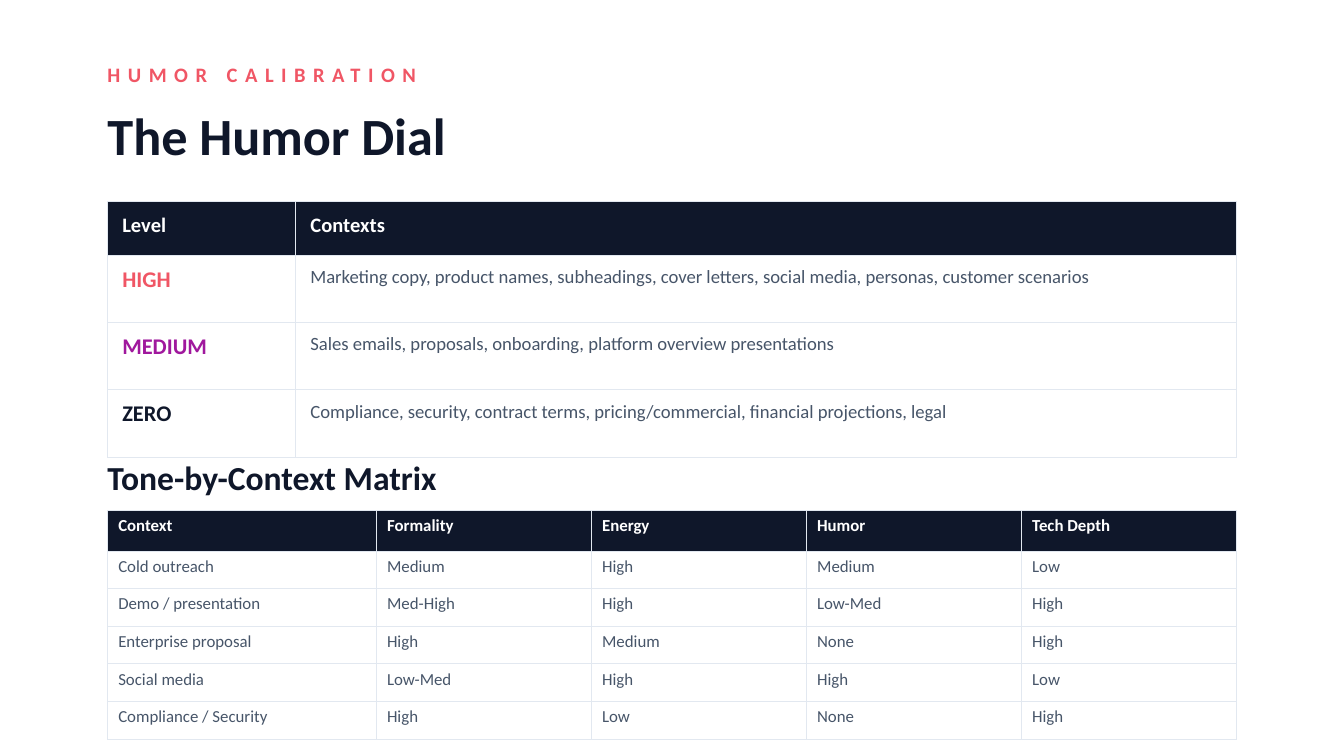
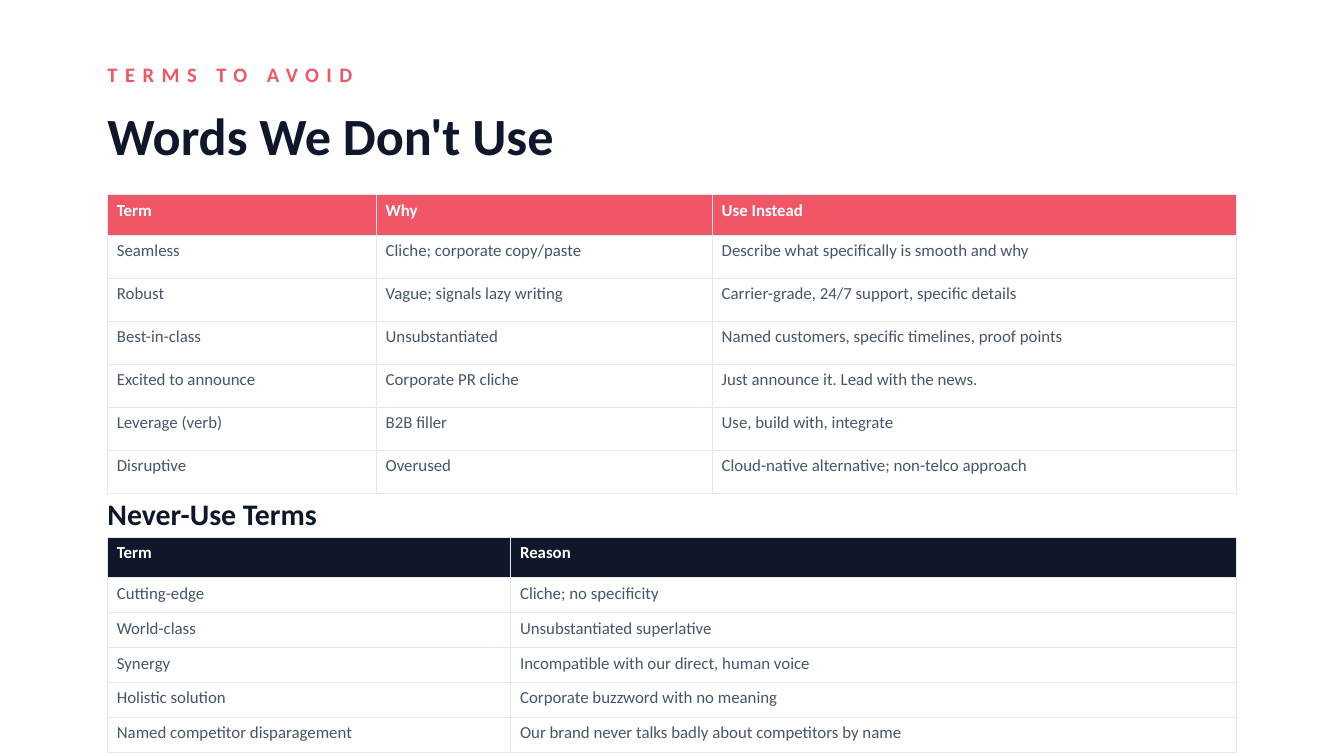
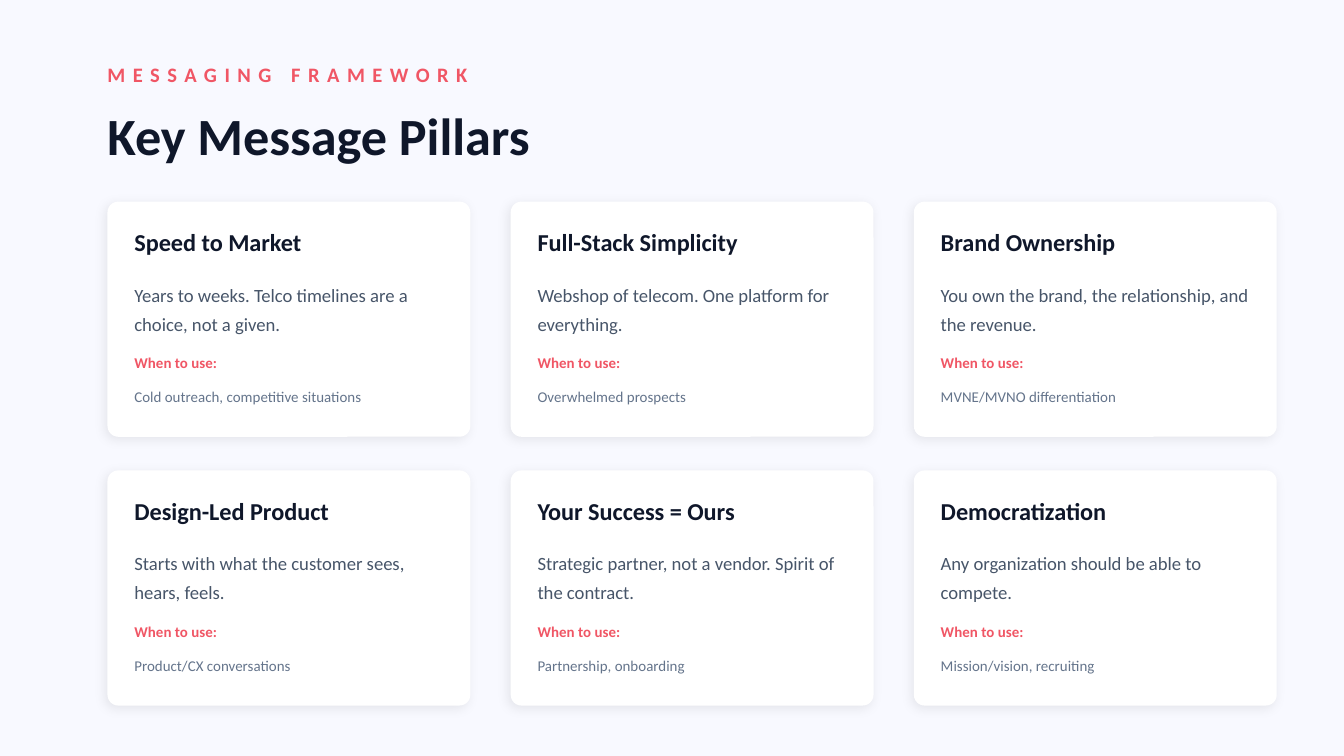
"""Build three brand voice slides: humor levels, terms to avoid and message pillars."""
from dataclasses import dataclass
from typing import Any

from lxml import etree
from pptx import Presentation
from pptx import util as u
from pptx.dml.color import RGBColor
from pptx.enum import shapes, text
from pptx.oxml.ns import qn

PX = 4572
FONT = "Calibri"
COLORS = {
    "white": "FFFFFF",
    "mist": "F8F9FF",
    "navy": "0F172A",
    "coral": "F05665",
    "purple": "A0189D",
    "slate": "475569",
    "gray": "64748B",
    "rule": "E2E8F0",
    "black": "000000",
}
MARGIN = 160
HEADING_WIDTH = 1600


@dataclass(frozen=True)
class Grid:
    """A ruled table with a filled header row."""

    top: int
    columns: tuple[int, ...]
    header_height: int
    row_height: int
    rows: tuple[tuple[str, ...], ...]
    pad_x: int = 14
    pad_y: int = 8
    header_color: str = "navy"
    header_size: int = 9
    body_size: int = 9
    level_colors: tuple[str, ...] = ()


@dataclass(frozen=True)
class Pillar:
    """A message pillar and the situations it suits."""

    title: str
    message: str
    usage: str


HUMOR_LEVELS = Grid(
    300, (280, 1400), 80, 100,
    (
        ("Level", "Contexts"),
        ("HIGH", "Marketing copy, product names, subheadings, cover letters, "
                 "social media, personas, customer scenarios"),
        ("MEDIUM", "Sales emails, proposals, onboarding, platform overview presentations"),
        ("ZERO", "Compliance, security, contract terms, pricing/commercial, "
                 "financial projections, legal"),
    ),
    pad_x=22, pad_y=16, header_size=11, body_size=10,
    level_colors=("coral", "purple", "navy"),
)
TONE_MATRIX = Grid(
    760, (400, 320, 320, 320, 320), 60, 56,
    (
        ("Context", "Formality", "Energy", "Humor", "Tech Depth"),
        ("Cold outreach", "Medium", "High", "Medium", "Low"),
        ("Demo / presentation", "Med-High", "High", "Low-Med", "High"),
        ("Enterprise proposal", "High", "Medium", "None", "High"),
        ("Social media", "Low-Med", "High", "High", "Low"),
        ("Compliance / Security", "High", "Low", "None", "High"),
    ),
    pad_x=16,
)
AVOIDED_TERMS = Grid(
    290, (400, 500, 780), 60, 64,
    (
        ("Term", "Why", "Use Instead"),
        ("Seamless", "Cliche; corporate copy/paste",
         "Describe what specifically is smooth and why"),
        ("Robust", "Vague; signals lazy writing",
         "Carrier-grade, 24/7 support, specific details"),
        ("Best-in-class", "Unsubstantiated",
         "Named customers, specific timelines, proof points"),
        ("Excited to announce", "Corporate PR cliche", "Just announce it. Lead with the news."),
        ("Leverage (verb)", "B2B filler", "Use, build with, integrate"),
        ("Disruptive", "Overused", "Cloud-native alternative; non-telco approach"),
    ),
    header_color="coral",
)
NEVER_TERMS = Grid(
    800, (600, 1080), 60, 52,
    (
        ("Term", "Reason"),
        ("Cutting-edge", "Cliche; no specificity"),
        ("World-class", "Unsubstantiated superlative"),
        ("Synergy", "Incompatible with our direct, human voice"),
        ("Holistic solution", "Corporate buzzword with no meaning"),
        ("Named competitor disparagement", "Our brand never talks badly about competitors by name"),
    ),
)
PILLARS = (
    Pillar("Speed to Market", "Years to weeks. Telco timelines are a choice, not a given.",
           "Cold outreach, competitive situations"),
    Pillar("Full-Stack Simplicity", "Webshop of telecom. One platform for everything.",
           "Overwhelmed prospects"),
    Pillar("Brand Ownership", "You own the brand, the relationship, and the revenue.",
           "MVNE/MVNO differentiation"),
    Pillar("Design-Led Product", "Starts with what the customer sees, hears, feels.",
           "Product/CX conversations"),
    Pillar("Your Success = Ours", "Strategic partner, not a vendor. Spirit of the contract.",
           "Partnership, onboarding"),
    Pillar("Democratization", "Any organization should be able to compete.",
           "Mission/vision, recruiting"),
)


def px(length: int) -> u.Emu:
    """Turn pixels into EMU."""
    return u.Emu(length * PX)


def rgb(color: str) -> RGBColor:
    """Look up a named colour."""
    return RGBColor.from_string(COLORS[color])


def write(frame: Any, content: str, *, size: int, color: str, bold: bool = False,
          tracking: int = 0, line_spacing: float | None = None) -> None:
    """Put one formatted run of text into a frame."""
    frame.word_wrap = True
    paragraph = frame.paragraphs[0]
    if line_spacing:
        paragraph.line_spacing = line_spacing
    run = paragraph.add_run()
    run.text = content
    run.font.name = FONT
    run.font.size = u.Pt(size)
    run.font.bold = bold
    run.font.color.rgb = rgb(color)
    if tracking:
        run.font._element.set("spc", str(tracking * 100))


def add_text(slide: Any, content: str, left: int, top: int, width: int, height: int,
             **style: Any) -> None:
    """Add a middle-anchored text box without insets."""
    frame = slide.shapes.add_textbox(px(left), px(top), px(width), px(height)).text_frame
    frame.margin_left = frame.margin_right = frame.margin_top = frame.margin_bottom = 0
    frame.vertical_anchor = text.MSO_ANCHOR.MIDDLE
    write(frame, content, **style)


def add_page(deck: Any, section: str, title: str, background: str = "white") -> Any:
    """Add a slide with its section label and title."""
    slide = deck.slides.add_slide(deck.slide_layouts[6])
    slide.background.fill.solid()
    slide.background.fill.fore_color.rgb = rgb(background)
    add_text(slide, section, MARGIN, 80, HEADING_WIDTH, 60,
             size=11, color="coral", bold=True, tracking=4)
    add_text(slide, title, MARGIN, 140, HEADING_WIDTH, 120, size=28, color="navy", bold=True)
    return slide


def rule_cell(cell: Any) -> None:
    """Draw thin rules on all four sides of a cell."""
    properties = cell._tc.get_or_add_tcPr()
    for side in ("lnL", "lnR", "lnT", "lnB"):
        line = etree.SubElement(properties, qn(f"a:{side}"), w=str(u.Pt(0.5)))
        fill = etree.SubElement(line, qn("a:solidFill"))
        etree.SubElement(fill, qn("a:srgbClr"), val=COLORS["rule"])


def cell_style(grid: Grid, row: int, column: int) -> dict[str, Any]:
    """Choose the text format for a cell by its place in the grid."""
    if row == 0:
        return {"size": grid.header_size, "color": "white", "bold": True}
    if column == 0 and grid.level_colors:
        return {"size": 12, "color": grid.level_colors[row - 1], "bold": True}
    return {"size": grid.body_size, "color": "slate"}


def add_grid(slide: Any, grid: Grid) -> None:
    """Draw a grid as a table."""
    height = grid.header_height + grid.row_height * (len(grid.rows) - 1)
    table = slide.shapes.add_table(
        len(grid.rows), len(grid.columns),
        px(MARGIN), px(grid.top), px(sum(grid.columns)), px(height),
    ).table
    table.first_row = table.horz_banding = False
    for column, width in zip(table.columns, grid.columns):
        column.width = px(width)
    for i, entries in enumerate(grid.rows):
        table.rows[i].height = px(grid.row_height if i else grid.header_height)
        for j, entry in enumerate(entries):
            cell = table.cell(i, j)
            cell.margin_left = cell.margin_right = px(grid.pad_x)
            cell.margin_top = cell.margin_bottom = px(grid.pad_y)
            rule_cell(cell)
            if i:
                cell.fill.background()
            else:
                cell.fill.solid()
                cell.fill.fore_color.rgb = rgb(grid.header_color)
            write(cell.text_frame, entry, **cell_style(grid, i, j))


def add_soft_shadow(shape: Any) -> None:
    """Give a shape a faint shadow towards the lower left."""
    shape.shadow.inherit = False
    effects = shape._element.spPr.find(qn("a:effectLst"))
    shadow = etree.SubElement(effects, qn("a:outerShdw"), blurRad=str(u.Pt(6)),
                              dist=str(u.Pt(2)), dir=str(135 * 60000),
                              algn="bl", rotWithShape="0")
    tint = etree.SubElement(shadow, qn("a:srgbClr"), val=COLORS["black"])
    etree.SubElement(tint, qn("a:alpha"), val="8000")


def add_pillar(slide: Any, pillar: Pillar, left: int, top: int) -> None:
    """Draw a pillar as a rounded card."""
    card = slide.shapes.add_shape(shapes.MSO_SHAPE.ROUNDED_RECTANGLE,
                                  px(left), px(top), px(540), px(350))
    card.adjustments[0] = 0.046
    card.fill.solid()
    card.fill.fore_color.rgb = rgb("white")
    card.line.fill.background()
    add_soft_shadow(card)
    inner = left + 40
    add_text(slide, pillar.title, inner, top + 30, 460, 60, size=13, color="navy", bold=True)
    add_text(slide, pillar.message, inner, top + 100, 460, 110,
             size=10, color="slate", line_spacing=1.3)
    add_text(slide, "When to use:", inner, top + 220, 460, 40, size=8, color="coral", bold=True)
    add_text(slide, pillar.usage, inner, top + 260, 460, 60, size=8, color="gray")


def main() -> None:
    """Build and save the deck."""
    deck = Presentation()
    deck.slide_width, deck.slide_height = px(2000), px(1125)

    humor = add_page(deck, "HUMOR CALIBRATION", "The Humor Dial")
    add_grid(humor, HUMOR_LEVELS)
    add_text(humor, "Tone-by-Context Matrix", MARGIN, 670, HEADING_WIDTH, 80,
             size=18, color="navy", bold=True)
    add_grid(humor, TONE_MATRIX)

    terms = add_page(deck, "TERMS TO AVOID", "Words We Don't Use")
    add_grid(terms, AVOIDED_TERMS)
    add_text(terms, "Never-Use Terms", MARGIN, 730, HEADING_WIDTH, 70,
             size=16, color="navy", bold=True)
    add_grid(terms, NEVER_TERMS)

    messages = add_page(deck, "MESSAGING FRAMEWORK", "Key Message Pillars", "mist")
    for i, pillar in enumerate(PILLARS):
        row, column = divmod(i, 3)
        add_pillar(messages, pillar, MARGIN + 600 * column, 300 + 400 * row)

    deck.save("out.pptx")


if __name__ == "__main__":
    main()
